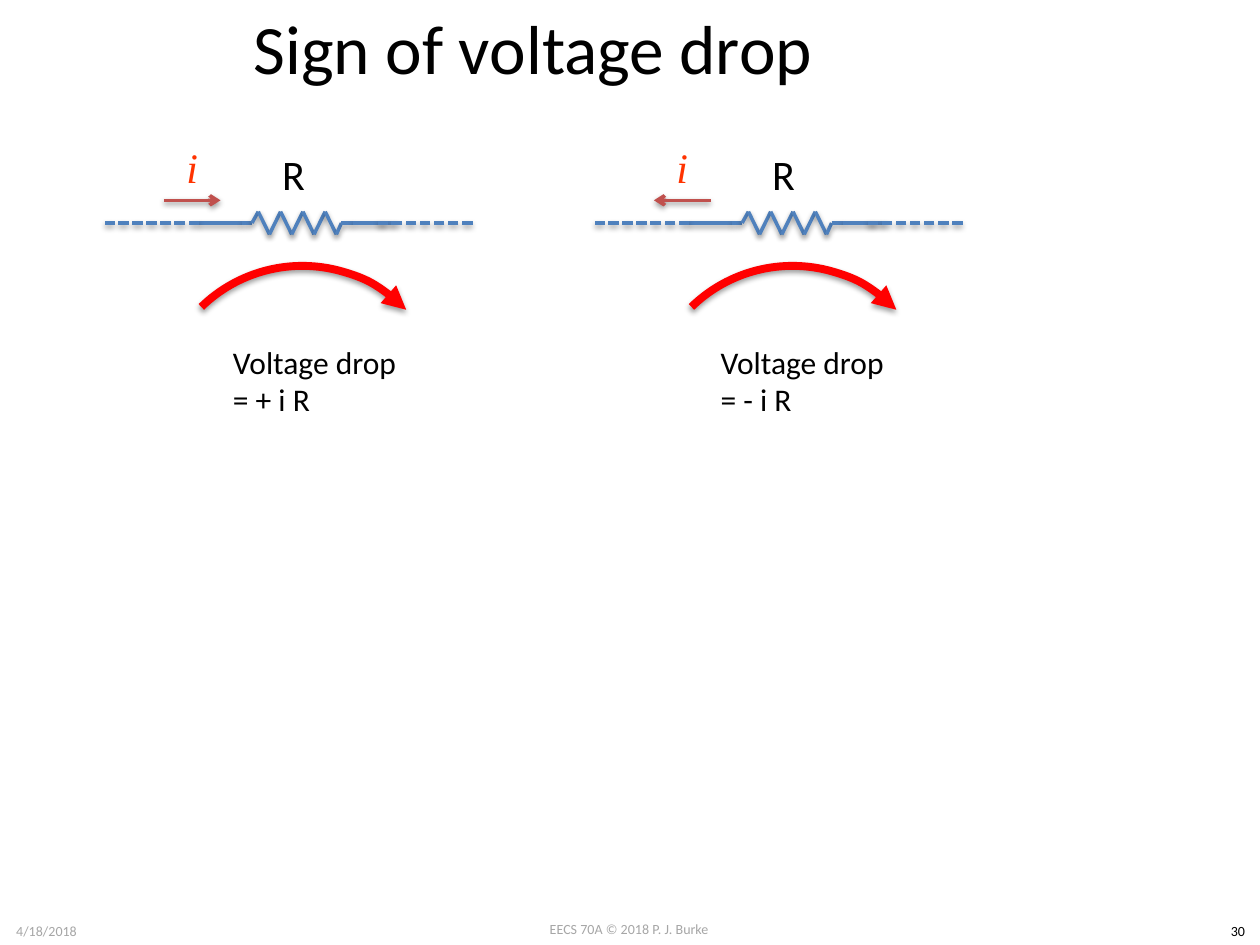
from lxml import etree
from pptx import Presentation
from pptx.dml.color import RGBColor
from pptx.enum.dml import MSO_LINE
from pptx.enum.shapes import MSO_CONNECTOR, MSO_SHAPE
from pptx.enum.text import MSO_ANCHOR, MSO_AUTO_SIZE, PP_ALIGN
from pptx.oxml import parse_xml
from pptx.oxml.ns import nsdecls, qn
from pptx.util import Inches, Pt

BLUE, CURRENT_RED, DROP_RED = "4F81BD", "C0504D", "FF0000"
WIRE_Y, ZIGZAG_TOP, ZIGZAG_BOTTOM = 1.77, 1.68, 1.86


def style_line(shape, color, width=2, head=None):
    """Set the stroke and, when named, the arrowhead at its end."""
    shape.line.color.rgb = RGBColor.from_string(color)
    shape.line.width = Pt(width)
    if head:
        etree.SubElement(shape.line._get_or_add_ln(), qn("a:tailEnd"), type=head)


def add_text(shapes, text, left, top, width, height, size, color="000000",
             font="Calibri", align=PP_ALIGN.LEFT, wrap=True):
    box = shapes.add_textbox(Inches(left), Inches(top), Inches(width), Inches(height))
    frame = box.text_frame
    frame.text = text
    frame.word_wrap = wrap
    frame.auto_size = MSO_AUTO_SIZE.SHAPE_TO_FIT_TEXT
    for paragraph in frame.paragraphs:
        paragraph.alignment = align
        for run in paragraph.runs:
            run.font.size = Pt(size)
            run.font.name = font
            run.font.color.rgb = RGBColor.from_string(color)
    return box


presentation = Presentation()
presentation.slide_width, presentation.slide_height = Inches(10), Inches(7.5)
slide = presentation.slides.add_slide(presentation.slide_layouts[5])

# Footer
for text, left, top, width, color in [
    ("EECS 70A © 2018 P. J. Burke", 3.83, 7.26, 2.33, "A6A6A6"),
    ("4/18/2018", 0, 7.27, 0.74, "A6A6A6"),
    ("30", 9.65, 7.27, 0.35, "000000"),
]:
    add_text(slide.shapes, text, left, top, width, 0.24, 8, color, align=PP_ALIGN.CENTER)

# Title
title = slide.shapes.title
title.left, title.top = Inches(0.83), Inches(0)
title.width, title.height = Inches(6.8), Inches(0.75)
title_frame = title.text_frame
title_frame.text = "Sign of voltage drop"
title_frame.auto_size = MSO_AUTO_SIZE.NONE
title_frame.vertical_anchor = MSO_ANCHOR.MIDDLE
title_frame.paragraphs[0].alignment = PP_ALIGN.CENTER
title_font = title_frame.paragraphs[0].runs[0].font
title_font.size = Pt(39.6)
title_font.name = "Calibri"
title_font.color.rgb = RGBColor.from_string("000000")

# Resistor outline: leads at both ends, eight alternating peaks between them
peaks = [(2.05 + 0.0885 * i, ZIGZAG_BOTTOM if i % 2 else ZIGZAG_TOP) for i in range(8)]
outline = [(x, WIRE_Y) for x in (1.58, 1.92, 2)] + peaks
outline += [(x, WIRE_Y) for x in (2.71, 2.8, 3.13)]

# Two circuits: offset, current arrow start and end, caption position and text
for offset, arrow_start, arrow_end, caption_left, caption in [
    (0, 1.3, 1.75, 1.75, "Voltage drop\n= + i R"),
    (3.89, 1.75, 1.3, 5.62, "Voltage drop\n= - i R"),
]:
    circuit = slide.shapes.add_group_shape().shapes
    segments = [(start, end, BLUE, None, None) for start, end in zip(outline, outline[1:])]
    segments += [
        ((arrow_start, 1.59), (arrow_end, 1.59), CURRENT_RED, None, "arrow"),
        ((1.58, WIRE_Y), (0.83, WIRE_Y), BLUE, MSO_LINE.SQUARE_DOT, None),
        ((3.75, WIRE_Y), (3, WIRE_Y), BLUE, MSO_LINE.SQUARE_DOT, None),
    ]
    for (x1, y1), (x2, y2), color, dash, head in segments:
        connector = circuit.add_connector(
            MSO_CONNECTOR.STRAIGHT, Inches(x1 + offset), Inches(y1),
            Inches(x2 + offset), Inches(y2))
        if dash:
            connector.line.dash_style = dash
        style_line(connector, color, head=head)

    add_text(circuit, "R", 2.14 + offset, 1.13, 0.44, 0.5, 24)
    current = add_text(circuit, "i", 1.14 + offset, 1.02, 0.77, 0.61, 24, "FF3300",
                       "Times New Roman", PP_ALIGN.CENTER)
    current.text_frame.auto_size = MSO_AUTO_SIZE.NONE
    current.text_frame.vertical_anchor = MSO_ANCHOR.MIDDLE
    current.text_frame.paragraphs[0].runs[0].font.italic = True

    add_text(slide.shapes, caption, caption_left, 2.67, 1.51, 0.71, 18, wrap=False)

    arc = slide.shapes.add_shape(MSO_SHAPE.ARC, Inches(1.25 + offset), Inches(2.11),
                                 Inches(2.3), Inches(2.3))
    arc.rotation = 315.8
    arc.fill.background()
    style_line(arc, DROP_RED, 4.5, "triangle")
    arc._element.spPr.append(parse_xml(
        f'<a:effectLst {nsdecls("a")}><a:outerShdw blurRad="40000" dist="20000" '
        'dir="5400000" rotWithShape="0"><a:srgbClr val="000000">'
        '<a:alpha val="38000"/></a:srgbClr></a:outerShdw></a:effectLst>'))

presentation.save("out.pptx")
